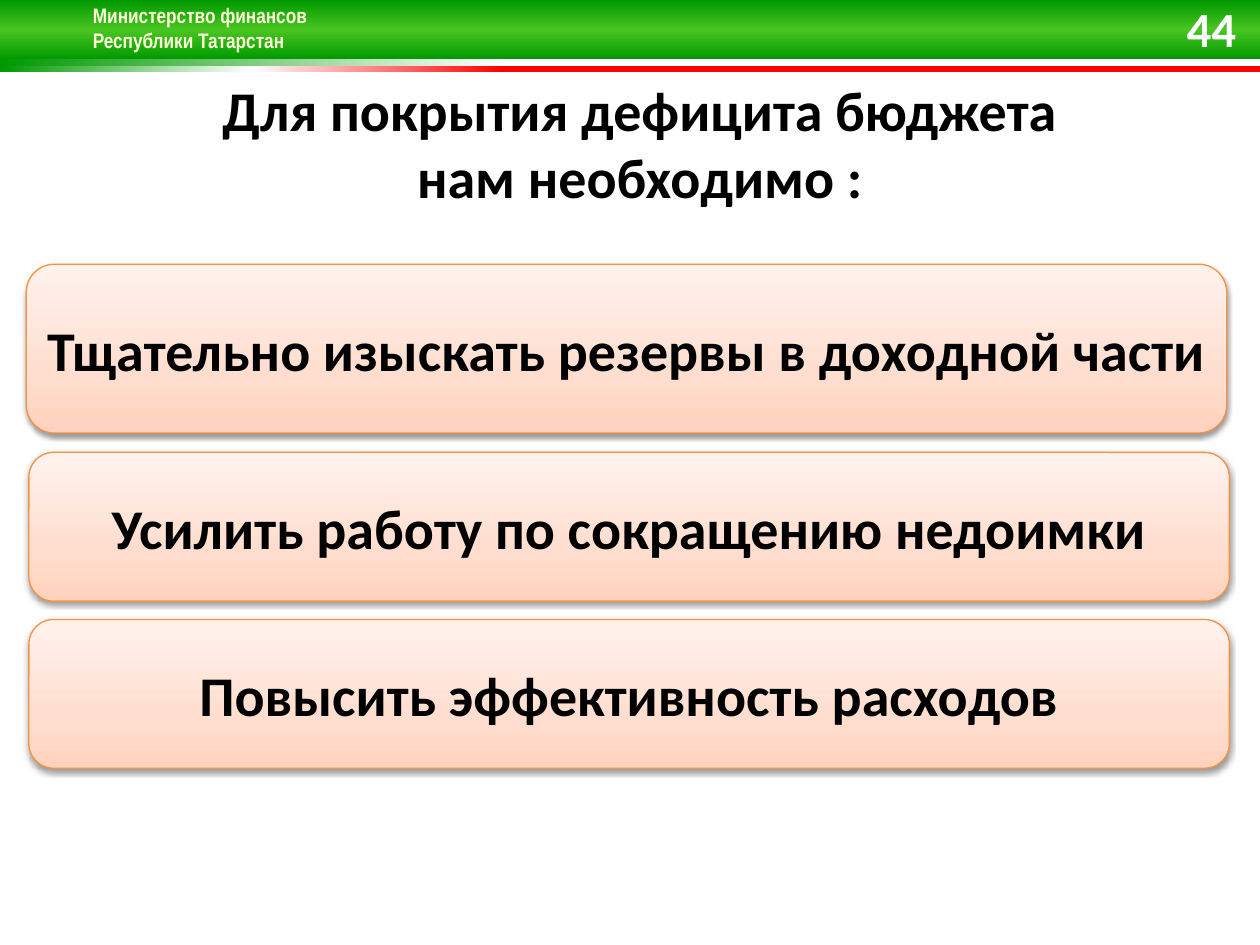
from lxml import etree
from pptx import Presentation
from pptx.dml.color import RGBColor
from pptx.enum import shapes, text
from pptx.oxml import ns, parse_xml
from pptx.util import Pt

NS = ns.nsdecls("a")
MID = text.MSO_ANCHOR.MIDDLE
MAIN = {"name": "Calibri", "size": Pt(32), "bold": True}
HEAD = {"name": "Arial Narrow", "size": Pt(12), "bold": True}
NUM = {"name": "Calibri", "size": Pt(28), "bold": True}
WHITE = [(0, "FFFFFF"), (60, "FFFFFF"), (100, "009900")]
RED = [(60, "FF0000"), (80, "FFFFFF"), (100, "009900")]
GREEN = [(0, "009900"), (50, "49C522"), (100, "009900")]
PEACH = [(0, "FFD2BD"), (35, "FFDED0"), (100, "FFF2ED")]
CARDS = [
    ("Тщательно изыскать резервы в доходной части", 15, 151, 96.5),
    ("Усилить работу по сокращению недоимки", 16.5, 258.5, 85),
    ("Повысить эффективность расходов", 16.5, 354, 85),
]


def color(code):
    """Turn a hex string into a colour."""
    return RGBColor.from_string(code)


def shadow(alpha, blur, dist, turn):
    """Return an outer shadow; lengths are in points."""
    return parse_xml(
        f'<a:effectLst {NS}><a:outerShdw blurRad="{Pt(blur)}" dist="{Pt(dist)}" '
        f'dir="{turn * 60000}" rotWithShape="0"><a:srgbClr val="000000">'
        f'<a:alpha val="{alpha * 1000}"/></a:srgbClr></a:outerShdw></a:effectLst>')


def grade(shape, stops, turn):
    """Fill a shape with a linear gradient."""
    marks = "".join(f'<a:gs pos="{pos * 1000}"><a:srgbClr val="{code}"/></a:gs>'
                    for pos, code in stops)
    fill = parse_xml(f'<a:gradFill {NS} rotWithShape="1"><a:gsLst>{marks}</a:gsLst>'
                     f'<a:lin ang="{turn * 60000}" scaled="0"/></a:gradFill>')
    shape._element.spPr.find(ns.qn("a:prstGeom")).addnext(fill)


def block(slide, kind, box, stops, turn):
    """Draw a gradient shape with no line or shadow."""
    shape = slide.shapes.add_shape(kind, *map(Pt, box))
    shape.shadow.inherit = False
    shape.line.fill.background()
    grade(shape, stops, turn)
    return shape


def write(shape, words, style, code, align, anchor=text.MSO_ANCHOR.TOP):
    """Write one paragraph into a shape and return its run."""
    frame = shape.text_frame
    frame.word_wrap = True
    frame.vertical_anchor = anchor
    para = frame.paragraphs[0]
    para.text = words
    para.alignment = align
    for run in para.runs:
        for key, value in style.items():
            setattr(run.font, key, value)
        run.font.color.rgb = color(code)
    return para.runs


def label(slide, box, *args):
    """Add a text box and return its runs."""
    return write(slide.shapes.add_textbox(*map(Pt, box)), *args)


def header(slide, x, y, wide):
    """Draw the banner with its stripes, owner and page number."""
    rect = shapes.MSO_SHAPE.RECTANGLE
    for top, high, stops, turn in ((34, 3.5, WHITE, 180), (37.5, 3.5, RED, 180),
                                   (0, 34, GREEN, 90)):
        block(slide, rect, (x, y + top, wide, high), stops, turn)
    runs = label(slide, (x + 46, y - 2, 185, 51),
                 "Министерство финансов\vРеспублики Татарстан",
                 HEAD, "FFFFD9", text.PP_ALIGN.LEFT)
    for run in runs:
        fill = run.font._element.find(ns.qn("a:solidFill"))
        fill.addnext(shadow(60, 3, 3, 45))
    label(slide, (x + wide - 52.5, y + 3.5, 46, 24.5), "44",
          NUM, "FFFFFF", text.PP_ALIGN.RIGHT, MID)


def card(slide, words, x, y, wide, high):
    """Draw one rounded card with its message."""
    shape = block(slide, shapes.MSO_SHAPE.ROUNDED_RECTANGLE,
                  (x, y, wide, high), PEACH, 270)
    shape.line.color.rgb = color("F69240")
    shape.line.width = Pt(0.75)
    props = shape._element.spPr
    props.replace(props.find(ns.qn("a:effectLst")), shadow(38, 3.1, 1.6, 90))
    write(shape, words, MAIN, "000000", text.PP_ALIGN.CENTER, MID)


def main():
    """Build and save the slide."""
    deck = Presentation()
    deck.slide_width, deck.slide_height = Pt(720), Pt(540)
    slide = deck.slides.add_slide(deck.slide_layouts[6])
    header(slide, 0, 0, 720)
    label(slide, (11.5, 39.5, 708.5, 83.5),
          "Для покрытия дефицита бюджета\vнам необходимо :",
          MAIN, "000000", text.PP_ALIGN.CENTER)
    for words, x, y, high in CARDS:
        card(slide, words, x, y, 686, high)
    deck.save("out.pptx")


if __name__ == "__main__":
    main()
